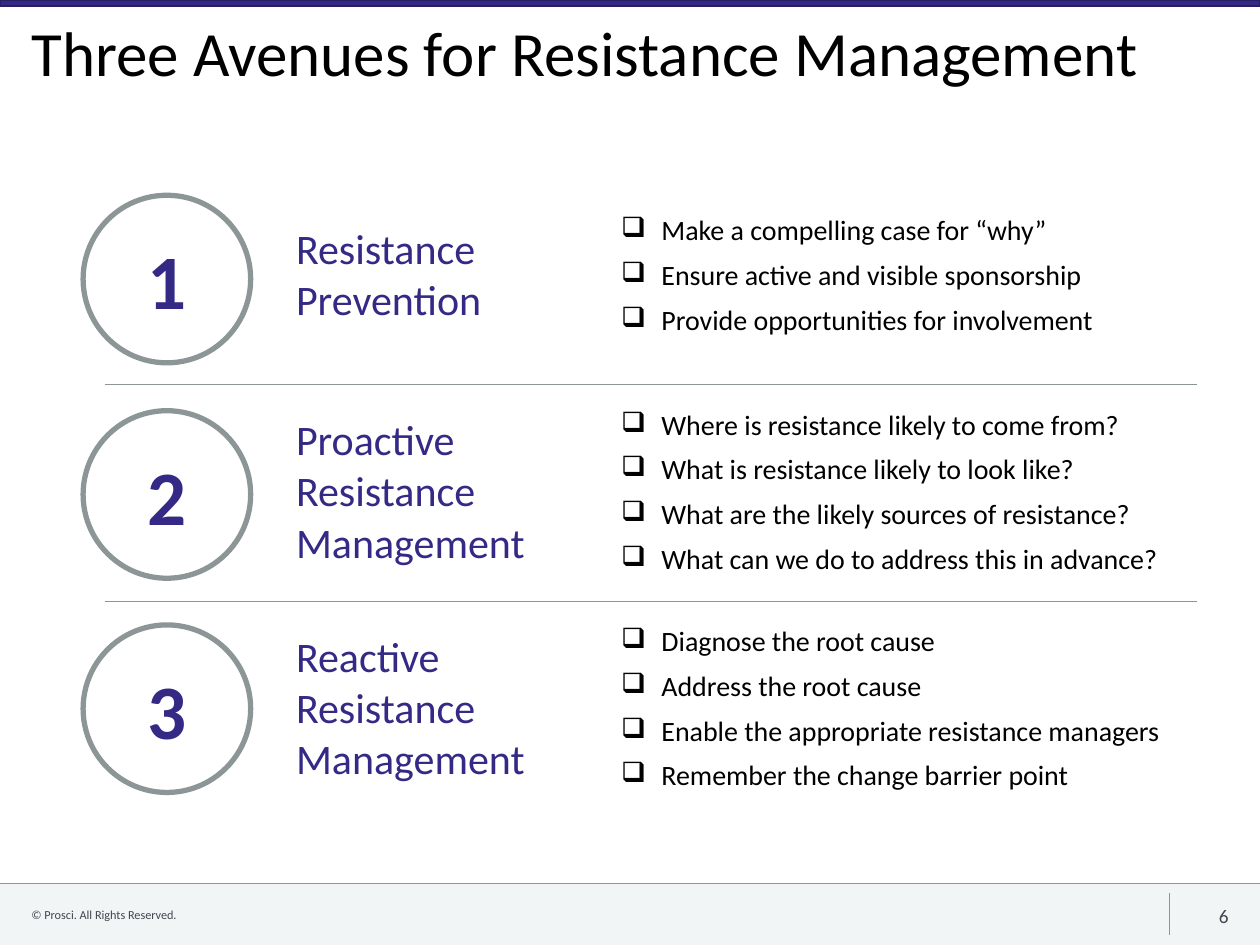
from lxml.etree import SubElement
from pptx import Presentation
from pptx.dml.color import RGBColor
from pptx.enum.shapes import MSO_CONNECTOR, MSO_SHAPE
from pptx.enum.text import MSO_ANCHOR, PP_ALIGN
from pptx.oxml.ns import qn
from pptx.util import Inches, Pt

TITLE = "Three Avenues for Resistance Management"
COPYRIGHT = "© Prosci. All Rights Reserved."
PAGE_NUMBER = "6"
AVENUES = [
    ("Resistance\vPrevention", 1.55, [
        "Make a compelling case for “why”",
        "Ensure active and visible sponsorship",
        "Provide opportunities for involvement"]),
    ("Proactive\vResistance\vManagement", 3.26, [
        "Where is resistance likely to come from?",
        "What is resistance likely to look like?",
        "What are the likely sources of resistance?",
        "What can we do to address this in advance?"]),
    ("Reactive\vResistance\vManagement", 4.96, [
        "Diagnose the root cause",
        "Address the root cause",
        "Enable the appropriate resistance managers",
        "Remember the change barrier point"]),
]
COLORS = {"purple": "342A86", "dark purple": "261F63", "gray": "8C9696",
          "footer": "F2F5F5", "slate": "3F474F", "black": "000000"}
FONT = "Calibri"
TABLE_LEFT, TABLE_TOP, ROW_HEIGHT = 0.36, 1.33, 1.72
COLUMN_WIDTHS = [1.89, 2.58, 4.83]
CIRCLE_LEFT, CIRCLE_SIZE = 0.66, 1.33
BULLET, BULLET_INDENT = "❑", 0.32


def color(name):
    return RGBColor.from_string(COLORS[name])


def write(frame, *lines, size, ink="black", bold=False, align=PP_ALIGN.LEFT,
          anchor=MSO_ANCHOR.MIDDLE, spacing=None, after=0, bullet=None):
    frame.word_wrap = True
    frame.vertical_anchor = anchor
    for index, line in enumerate(lines):
        para = frame.add_paragraph() if index else frame.paragraphs[0]
        para.text = line
        para.alignment = align
        if spacing:
            para.line_spacing = spacing
        if after and index < len(lines) - 1:
            para.space_after = Pt(after)
        if bullet:
            properties = para._p.get_or_add_pPr()
            properties.set("marL", str(Inches(BULLET_INDENT)))
            properties.set("indent", str(-Inches(BULLET_INDENT)))
            SubElement(properties, qn("a:buChar")).set("char", bullet)
        for font in [para.font] + [span.font for span in para.runs]:
            font.name, font.size, font.bold = FONT, Pt(size), bold
            font.color.rgb = color(ink)


def add_text(slide, text, left, top, width, height, margins, **style):
    box = slide.shapes.add_textbox(
        Inches(left), Inches(top), Inches(width), Inches(height))
    frame = box.text_frame
    frame.margin_left, frame.margin_top, frame.margin_right, frame.margin_bottom = map(
        Inches, margins)
    write(frame, text, **style)


def add_shape(slide, kind, left, top, width, height, fill=None, line=None, weight=1):
    shape = slide.shapes.add_shape(
        kind, Inches(left), Inches(top), Inches(width), Inches(height))
    shape.shadow.inherit = False
    if fill:
        shape.fill.solid()
        shape.fill.fore_color.rgb = color(fill)
    else:
        shape.fill.background()
    if line:
        shape.line.color.rgb = color(line)
        shape.line.width = Pt(weight)
    else:
        shape.line.fill.background()
    return shape


def add_rule(slide, *ends):
    rule = slide.shapes.add_connector(MSO_CONNECTOR.STRAIGHT, *map(Inches, ends))
    rule.line.color.rgb = color("gray")
    rule.line.width = Pt(0.5)
    SubElement(rule._element.spPr, qn("a:effectLst"))


def add_avenue_table(slide):
    table = slide.shapes.add_table(
        len(AVENUES), len(COLUMN_WIDTHS), Inches(TABLE_LEFT), Inches(TABLE_TOP),
        Inches(sum(COLUMN_WIDTHS)), Inches(ROW_HEIGHT * len(AVENUES))).table
    table.first_row = table.horz_banding = False
    for column, width in zip(table.columns, COLUMN_WIDTHS):
        column.width = Inches(width)
    for cell in table.iter_cells():
        cell.fill.background()
        cell.vertical_anchor = MSO_ANCHOR.MIDDLE
    for index, (name, _, actions) in enumerate(AVENUES):
        table.rows[index].height = Inches(ROW_HEIGHT)
        write(table.cell(index, 1).text_frame, name, size=24, ink="purple", anchor=None)
        write(table.cell(index, 2).text_frame, *actions, size=16, anchor=None,
              after=6, bullet=BULLET)
    # The last list also has space below it
    table.cell(len(AVENUES) - 1, 2).text_frame.paragraphs[-1].space_after = Pt(6)


def main():
    deck = Presentation()
    deck.slide_width, deck.slide_height = Inches(10), Inches(7.5)
    slide = deck.slides.add_slide(deck.slide_layouts[6])

    # Top band and footer
    add_shape(slide, MSO_SHAPE.RECTANGLE, 0, 7.01, 10, 0.49, fill="footer")
    add_shape(slide, MSO_SHAPE.RECTANGLE, 0, 0, 10, 0.05,
              fill="purple", line="dark purple")
    add_rule(slide, 0, 7.01, 10, 7.01)
    add_rule(slide, 9.28, 7.09, 9.28, 7.42)
    add_text(slide, COPYRIGHT, 0.25, 7.15, 7.34, 0.22, (0, 0.05, 0.1, 0.05),
             size=7, ink="slate")
    add_text(slide, PAGE_NUMBER, 9.26, 7.16, 0.49, 0.21, (0, 0, 0, 0),
             size=11, ink="slate", align=PP_ALIGN.RIGHT)

    # Title
    add_text(slide, TITLE, 0.25, 0.13, 9.5, 0.9, (0, 0.05, 0, 0.05),
             size=36, anchor=MSO_ANCHOR.TOP, spacing=0.9)

    # Avenues: table, numbered circles and the rules between rows
    add_avenue_table(slide)
    for index, (_, top, _) in enumerate(AVENUES):
        circle = add_shape(slide, MSO_SHAPE.OVAL, CIRCLE_LEFT, top, CIRCLE_SIZE,
                           CIRCLE_SIZE, line="gray", weight=3)
        write(circle.text_frame, str(index + 1), size=44, ink="purple", bold=True,
              align=PP_ALIGN.CENTER)
        if index:
            border = TABLE_TOP + index * ROW_HEIGHT
            add_rule(slide, 0.83, border, 9.5, border)

    deck.save("out.pptx")


if __name__ == "__main__":
    main()
